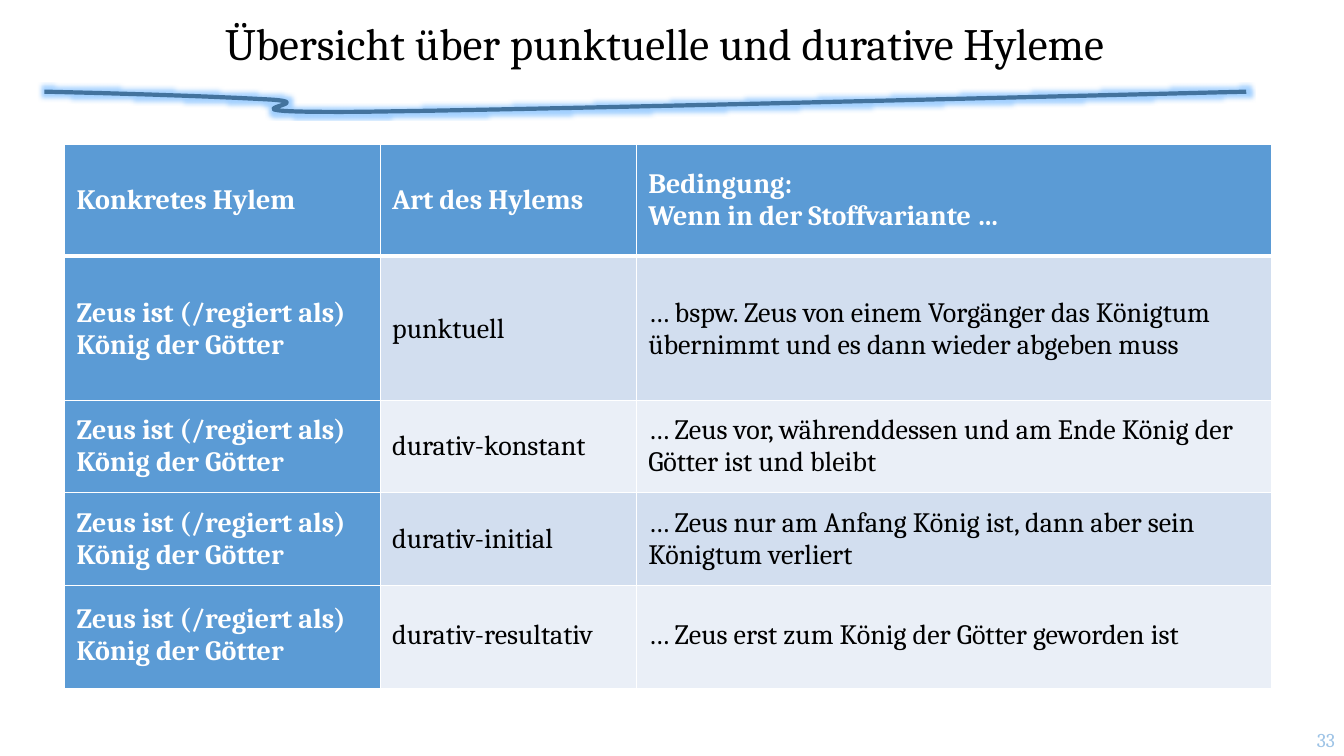
from lxml import etree
from pptx import Presentation
from pptx.dml.color import RGBColor
from pptx.enum.text import MSO_ANCHOR as Anchor, MSO_AUTO_SIZE as AutoSize, PP_ALIGN as Align
from pptx.oxml import parse_xml
from pptx.oxml.ns import nsdecls, qn
from pptx.util import Inches, Pt

FONT = "Cambria"
BLUE, WHITE, BLACK = "5B9BD5", "FFFFFF", "000000"
BANDS = ("D2DEEF", "EAEFF7")

HYLEME = "Zeus ist (/regiert als) König der Götter"
HEADER = ("Konkretes Hylem", "Art des Hylems", "Bedingung:\nWenn in der Stoffvariante …")
KINDS = (
    ("punktuell", "… bspw. Zeus von einem Vorgänger das Königtum übernimmt "
                  "und es dann wieder abgeben muss"),
    ("durativ-konstant", "… Zeus vor, währenddessen und am Ende König der Götter ist und bleibt"),
    ("durativ-initial", "… Zeus nur am Anfang König ist, dann aber sein Königtum verliert"),
    ("durativ-resultativ", "… Zeus erst zum König der Götter geworden ist"),
)
COLUMN_WIDTHS = (3.13, 2.54, 6.3)
ROW_HEIGHTS = (1.11, 1.43, 0.92, 0.92, 1.02)

STROKE_START = (0.44, 0.91)
STROKE_CURVES = (
    ((1.31, 0.93), (2.19, 0.96), (2.71, 0.99)),
    ((3.23, 1.03), (1.95, 1.12), (3.56, 1.11)),
    ((5.17, 1.09), (8.76, 1), (12.36, 0.91)),
)


def color(value):
    return RGBColor.from_string(value)


def apply(target, values):
    for name, value in values.items():
        setattr(target, name, value)


def write(frame, text, size, hue, bold=False, **para_format):
    frame.text = text
    for para in frame.paragraphs:
        apply(para, para_format)
        for span in para.runs:
            apply(span.font, {"name": FONT, "size": Pt(size), "bold": bold})
            span.font.color.rgb = color(hue)


def set_frame(frame):
    apply(frame, {"word_wrap": True, "auto_size": AutoSize.NONE,
                  "vertical_anchor": Anchor.MIDDLE})


def add_title(page, text):
    title = page.shapes.title
    apply(title, {"left": Inches(0.46), "top": Inches(0),
                  "width": Inches(12.27), "height": Inches(0.91)})
    set_frame(title.text_frame)
    write(title.text_frame, text, 32, BLACK, alignment=Align.CENTER, line_spacing=0.9)


def add_page_number(page, number):
    box = page.shapes.add_textbox(Inches(12.61), Inches(7.19), Inches(0.73), Inches(0.29))
    set_frame(box.text_frame)
    write(box.text_frame, number, 14, "9DC3E6", alignment=Align.RIGHT)
    box.text_frame.margin_right = Inches(0.1)


def curve_points(start, curves, steps=24):
    """Sample a chain of cubic Bézier curves."""
    for first, second, end in curves:
        for step in range(1, steps + 1):
            t = step / steps
            weights = ((1 - t) ** 3, 3 * t * (1 - t) ** 2, 3 * t * t * (1 - t), t ** 3)
            yield tuple(
                Inches(sum(w * point[axis] for w, point in zip(weights, (start, first, second, end))))
                for axis in (0, 1)
            )
        start = end


def add_stroke(page):
    x, y = STROKE_START
    builder = page.shapes.build_freeform(Inches(x), Inches(y))
    builder.add_line_segments(list(curve_points(STROKE_START, STROKE_CURVES)), close=False)
    stroke = builder.convert_to_shape()
    stroke.fill.background()
    stroke.line.color.rgb = color("43739E")
    stroke.line.width = Pt(3)
    stroke.shadow.inherit = False
    effects = stroke.element.spPr.find(qn("a:effectLst"))
    glow = etree.SubElement(effects, qn("a:glow"), rad=str(Pt(5)))
    hue = etree.SubElement(glow, qn("a:srgbClr"), val="66B2FF")
    etree.SubElement(hue, qn("a:alpha"), val="60000")


def set_borders(cell, top, bottom):
    props = cell._tc.get_or_add_tcPr()
    for index, (side, width) in enumerate((("L", 1), ("R", 1), ("T", top), ("B", bottom))):
        props.insert(index, parse_xml(
            f'<a:ln{side} {nsdecls("a")} w="{Pt(width)}"><a:solidFill>'
            f'<a:srgbClr val="{WHITE}"/></a:solidFill></a:ln{side}>'))


def fill_cell(cell, text, row, column):
    strong = row == 0 or column == 0
    last_row = len(ROW_HEIGHTS) - 1
    cell.fill.solid()
    cell.fill.fore_color.rgb = color(BLUE if strong else BANDS[(row - 1) % 2])
    apply(cell, {
        "vertical_anchor": Anchor.MIDDLE,
        "margin_left": Inches(0.12),
        "margin_right": Inches(0 if column == 2 else 0.07),
        "margin_top": Inches(0.05 if row < 2 else 0.02),
        "margin_bottom": Inches(0.05 if row in (0, last_row) else 0.02),
    })
    write(cell.text_frame, text, 20, WHITE if strong else BLACK, strong)
    set_borders(cell, 3 if row == 1 else 1, 3 if row == 0 else 1)


def add_overview(page):
    rows = [HEADER] + [(HYLEME, *kind) for kind in KINDS]
    table = page.shapes.add_table(
        len(rows), len(HEADER), Inches(0.64), Inches(1.43),
        Inches(sum(COLUMN_WIDTHS)), Inches(sum(ROW_HEIGHTS))).table
    for column, width in zip(table.columns, COLUMN_WIDTHS):
        column.width = Inches(width)
    for row, height in zip(table.rows, ROW_HEIGHTS):
        row.height = Inches(height)
    for r, texts in enumerate(rows):
        for c, text in enumerate(texts):
            fill_cell(table.cell(r, c), text, r, c)


def main():
    deck = Presentation()
    apply(deck, {"slide_width": Inches(13.33), "slide_height": Inches(7.5)})
    page = deck.slides.add_slide(deck.slide_layouts[5])
    add_stroke(page)
    add_title(page, "Übersicht über punktuelle und durative Hyleme")
    add_overview(page)
    add_page_number(page, "33")
    deck.save("out.pptx")


if __name__ == "__main__":
    main()
